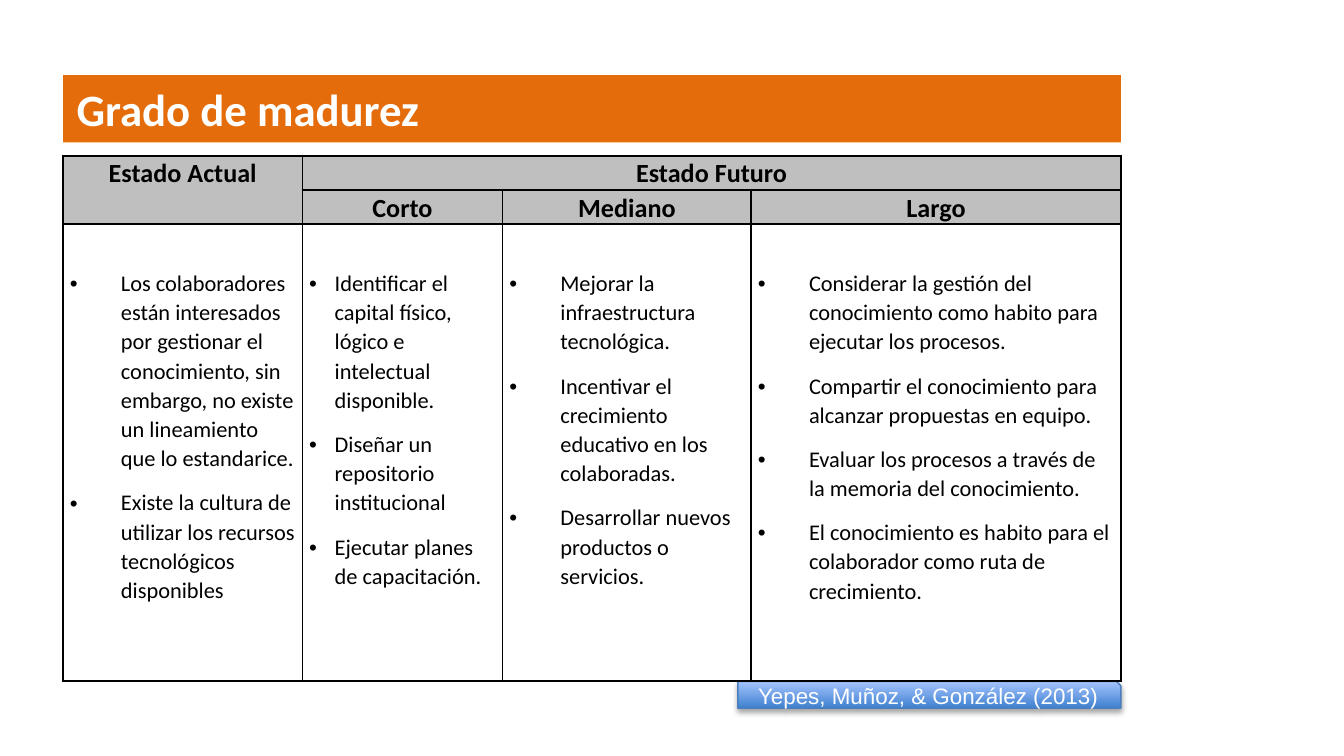
import pptx
import pptx.dml.color
import pptx.enum.shapes
import pptx.enum.text
import pptx.oxml
import pptx.oxml.ns
import pptx.util
from lxml import etree

Inches, Pt = pptx.util.Inches, pptx.util.Pt
RGBColor = pptx.dml.color.RGBColor
PP_ALIGN, MSO_ANCHOR = pptx.enum.text.PP_ALIGN, pptx.enum.text.MSO_ANCHOR
qn = pptx.oxml.ns.qn

ORANGE = RGBColor(0xE4, 0x6C, 0x0A)
GREY = RGBColor(0xBF, 0xBF, 0xBF)
BLACK = RGBColor(0, 0, 0)
WHITE = RGBColor(0xFF, 0xFF, 0xFF)
BLUE_DARK = RGBColor(0x3F, 0x80, 0xCE)
BLUE_LIGHT = RGBColor(0xA4, 0xC4, 0xFF)
BLUE_LINE = RGBColor(0x4B, 0x7E, 0xBC)

TITLE_FONT = {"name": "Calibri", "size": Pt(24), "bold": True}
HEADER_FONT = {"name": "Calibri", "size": Pt(14), "bold": True}
BODY_FONT = {"name": "Calibri", "size": Pt(12), "bold": False}
SOURCE_FONT = {"name": "Arial", "size": Pt(12), "bold": False}
CELL_PARAGRAPH = {"line_spacing": 1.07, "space_after": Pt(8)}

SLIDE_WIDTH = 10
SLIDE_HEIGHT = SLIDE_WIDTH * 9 / 16
LEFT = 0.47
COLUMNS = [1.78, 1.49, 1.85, 2.75]
ROWS = [0.25, 0.25, 3.4]
WIDTH = sum(COLUMNS)

HEADERS = [(0, 0, "Estado Actual"), (0, 1, "Estado Futuro"),
           (1, 1, "Corto"), (1, 2, "Mediano"), (1, 3, "Largo")]
INDENTS = [0.38, 0.19, 0.38, 0.38]
LISTS = [
    ["Los colaboradores están interesados por gestionar el conocimiento, "
     "sin embargo, no existe un lineamiento que lo estandarice.",
     "Existe la cultura de utilizar los recursos tecnológicos disponibles"],
    ["Identificar el capital físico, lógico e intelectual disponible.",
     "Diseñar un repositorio institucional",
     "Ejecutar planes de capacitación."],
    ["Mejorar la infraestructura tecnológica.",
     "Incentivar el crecimiento educativo en los colaboradas.",
     "Desarrollar nuevos productos o servicios."],
    ["Considerar la gestión del conocimiento como habito para ejecutar los procesos.",
     "Compartir el conocimiento para alcanzar propuestas en equipo.",
     "Evaluar los procesos a través de la memoria del conocimiento.",
     "El conocimiento es habito para el colaborador como ruta de crecimiento."],
]


def set_all(target, formats):
    for name, value in formats.items():
        setattr(target, name, value)


def write(paragraph, text, font, color, formats):
    set_all(paragraph, formats)
    run = paragraph.add_run()
    run.text = text
    set_all(run.font, font)
    run.font.color.rgb = color


presentation = pptx.Presentation()
set_all(presentation, {"slide_width": Inches(SLIDE_WIDTH),
                       "slide_height": Inches(SLIDE_HEIGHT)})
slide = presentation.slides.add_slide(presentation.slide_layouts[5])

# Title band
title = slide.shapes.title
set_all(title, {"left": Inches(LEFT), "top": Inches(0.56),
                "width": Inches(WIDTH), "height": Inches(0.5)})
title.fill.solid()
title.fill.fore_color.rgb = ORANGE
set_all(title.text_frame, {"auto_size": pptx.enum.text.MSO_AUTO_SIZE.NONE,
                           "vertical_anchor": MSO_ANCHOR.TOP})
write(title.text_frame.paragraphs[0], "Grado de madurez", TITLE_FONT, WHITE,
      {"alignment": PP_ALIGN.LEFT})

# Source tag, right-aligned with the table and partly behind it
tag_width = 2.85
tag = slide.shapes.add_shape(
    pptx.enum.shapes.MSO_SHAPE.SNIP_1_RECTANGLE,
    Inches(LEFT + WIDTH - tag_width), Inches(5.07), Inches(tag_width), Inches(0.2))
tag.fill.gradient()
tag.fill.gradient_angle = 90
for stop, color in zip(tag.fill.gradient_stops, [BLUE_DARK, BLUE_LIGHT]):
    stop.color.rgb = color
tag.line.color.rgb = BLUE_LINE
tag.line.width = Pt(0.75)
tag.shadow.inherit = False
effects = tag._element.spPr.find(qn("a:effectLst"))
shadow = etree.SubElement(effects, qn("a:outerShdw"), blurRad=str(Pt(3.1)),
                          dist=str(Pt(1.8)), dir="5400000", rotWithShape="0")
shadow_color = etree.SubElement(shadow, qn("a:srgbClr"), val=str(BLACK))
etree.SubElement(shadow_color, qn("a:alpha"), val="35000")
set_all(tag.text_frame, {"word_wrap": True, "vertical_anchor": MSO_ANCHOR.MIDDLE})
write(tag.text_frame.paragraphs[0], "Yepes, Muñoz, & González (2013)", SOURCE_FONT,
      WHITE, {"alignment": PP_ALIGN.CENTER})

# Maturity table
table = slide.shapes.add_table(
    len(ROWS), len(COLUMNS), Inches(LEFT), Inches(1.16),
    Inches(WIDTH), Inches(sum(ROWS))).table
set_all(table, {"first_row": False, "horz_banding": False})
for column, width in zip(table.columns, COLUMNS):
    column.width = Inches(width)
for row, height in zip(table.rows, ROWS):
    row.height = Inches(height)

for row_index in range(len(ROWS)):
    for column_index in range(len(COLUMNS)):
        cell = table.cell(row_index, column_index)
        is_header = row_index < 2
        set_all(cell, {"margin_left": Inches(0.05), "margin_right": Inches(0.05),
                       "margin_top": Inches(0 if is_header else 0.33),
                       "margin_bottom": 0})
        properties = cell._tc.get_or_add_tcPr()
        for side in ["lnL", "lnR", "lnT", "lnB"]:
            border = etree.SubElement(properties, qn(f"a:{side}"), w=str(Pt(1)))
            border_fill = etree.SubElement(border, qn("a:solidFill"))
            etree.SubElement(border_fill, qn("a:srgbClr"), val=str(BLACK))
        if is_header:
            cell.fill.solid()
            cell.fill.fore_color.rgb = GREY
        else:
            cell.fill.background()

table.cell(0, 0).merge(table.cell(1, 0))
table.cell(0, 1).merge(table.cell(0, 3))
for row_index, column_index, text in HEADERS:
    write(table.cell(row_index, column_index).text_frame.paragraphs[0], text,
          HEADER_FONT, BLACK, {**CELL_PARAGRAPH, "alignment": PP_ALIGN.CENTER})

for column_index, (items, indent) in enumerate(zip(LISTS, INDENTS)):
    frame = table.cell(2, column_index).text_frame
    for index, item in enumerate(items):
        paragraph = frame.add_paragraph() if index else frame.paragraphs[0]
        properties = paragraph._p.get_or_add_pPr()
        properties.set("marL", str(Inches(indent)))
        properties.set("indent", str(-Inches(indent)))
        etree.SubElement(properties, qn("a:buFont"), typeface="Arial")
        etree.SubElement(properties, qn("a:buChar"), char="•")
        write(paragraph, item, BODY_FONT, BLACK, CELL_PARAGRAPH)

presentation.save("out.pptx")
